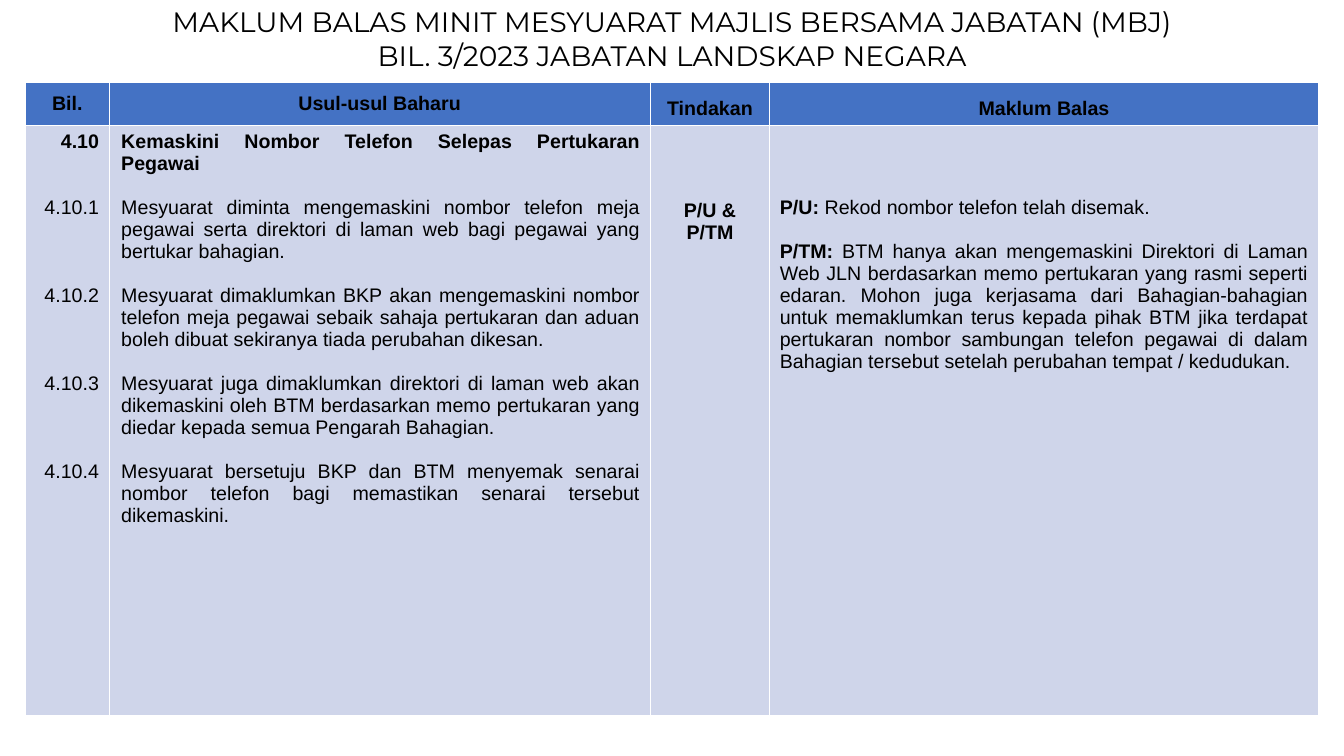
import pptx
import pptx.dml.color
import pptx.enum.text
import pptx.oxml.ns
import pptx.util
from lxml import etree

Pt = pptx.util.Pt
Align = pptx.enum.text.PP_ALIGN
Anchor = pptx.enum.text.MSO_ANCHOR

THEME = {
    "text": "000000", "header": "4472C4", "body": "CFD5EA", "border": "FFFFFF",
    "title_font": "Montserrat", "table_font": "Arial",
    "title_size": 20, "table_size": 14,
}
LINE = 15.75

HEADERS = [("Bil.", 1), ("Usul-usul Baharu", 1), ("Tindakan", 1.5), ("Maklum Balas", 1.5)]
ITEM_NUMBERS = ["4.10", "4.10.1", "4.10.2", "4.10.3", "4.10.4"]
PROPOSALS = [
    "Kemaskini Nombor Telefon Selepas Pertukaran Pegawai",
    "Mesyuarat diminta mengemaskini nombor telefon meja pegawai serta direktori di laman web "
    "bagi pegawai yang bertukar bahagian.",
    "Mesyuarat dimaklumkan BKP akan mengemaskini nombor telefon meja pegawai sebaik sahaja "
    "pertukaran dan aduan boleh dibuat sekiranya tiada perubahan dikesan.",
    "Mesyuarat juga dimaklumkan direktori di laman web akan dikemaskini oleh BTM berdasarkan "
    "memo pertukaran yang diedar kepada semua Pengarah Bahagian.",
    "Mesyuarat bersetuju BKP dan BTM menyemak senarai nombor telefon bagi memastikan senarai "
    "tersebut dikemaskini.",
]
FEEDBACK = [
    ("P/U: ", "Rekod nombor telefon telah disemak."),
    ("P/TM: ", "BTM hanya akan mengemaskini Direktori di Laman Web JLN berdasarkan memo pertukaran "
     "yang rasmi seperti edaran. Mohon juga kerjasama dari Bahagian-bahagian untuk memaklumkan "
     "terus kepada pihak BTM jika terdapat pertukaran nombor sambungan telefon pegawai di dalam "
     "Bahagian tersebut setelah perubahan tempat / kedudukan."),
]


def set_attributes(target, values):
    """Set each named attribute of the target."""
    for name, value in values.items():
        setattr(target, name, value)


class SlideBuilder:
    """Draws styled elements on the current slide."""

    def __init__(self, slide, theme):
        """Keep the slide and its style."""
        self.slide = slide
        self.theme = theme

    def color(self, name):
        """Return a theme colour."""
        return pptx.dml.color.RGBColor.from_string(self.theme[name])

    def text(self, frame, paragraphs, kind, **layout):
        """Fill a frame with paragraphs, each a list of (text, bold) runs and a space before."""
        for index, (runs, space) in enumerate(paragraphs):
            paragraph = frame.paragraphs[0] if index == 0 else frame.add_paragraph()
            set_attributes(paragraph, {"space_before": Pt(space), **layout})
            for content, bold in runs:
                run = paragraph.add_run()
                run.text = content
                set_attributes(run.font, {"name": self.theme[kind + "_font"],
                                          "size": Pt(self.theme[kind + "_size"]), "bold": bold})
                run.font.color.rgb = self.color("text")

    def title(self, box, lines):
        """Add the centred title."""
        frame = self.slide.shapes.add_textbox(*map(Pt, box)).text_frame
        frame.word_wrap = True
        self.text(frame, [([(line, False)], 0) for line in lines], "title", alignment=Align.CENTER)

    def table(self, box, widths, heights):
        """Add an unstyled table with the given column widths and row heights."""
        table = self.slide.shapes.add_table(len(heights), len(widths), *map(Pt, box)).table
        set_attributes(table, {"first_row": False, "horz_banding": False})
        for column, width in zip(table.columns, widths):
            column.width = Pt(width)
        for row, height in zip(table.rows, heights):
            row.height = Pt(height)
        return table

    def cell(self, cell, fill, paragraphs, margins, anchor=Anchor.TOP, **layout):
        """Style a table cell and add its paragraphs."""
        properties = cell._tc.get_or_add_tcPr()
        for side in "LRTB":
            line = etree.SubElement(properties, pptx.oxml.ns.qn("a:ln" + side), w=str(Pt(1)))
            solid = etree.SubElement(line, pptx.oxml.ns.qn("a:solidFill"))
            etree.SubElement(solid, pptx.oxml.ns.qn("a:srgbClr"), val=self.theme["border"])
        cell.fill.solid()
        cell.fill.fore_color.rgb = self.color(fill)
        left, top = margins
        set_attributes(cell, {"margin_left": Pt(left), "margin_top": Pt(top), "margin_right": Pt(7.2),
                              "margin_bottom": Pt(3.6), "vertical_anchor": anchor})
        self.text(cell.text_frame, paragraphs, "table", **layout)


def main():
    """Build the slide and save it."""
    presentation = pptx.Presentation()
    set_attributes(presentation, {"slide_width": Pt(960), "slide_height": Pt(540)})
    builder = SlideBuilder(presentation.slides.add_slide(presentation.slide_layouts[6]), THEME)

    table = builder.table((18.2, 58.5, 923.6, 453), (59.8, 386.5, 85.4, 391.9), (31, 422))
    for column, (header, spacing) in enumerate(HEADERS):
        builder.cell(table.cell(0, column), "header", [([(header, True)], 0)], (7.2, 3.6),
                     Anchor.MIDDLE, alignment=Align.CENTER, line_spacing=spacing)

    number_gaps = [0, 2 * LINE] + [3 * LINE] * 3
    numbers = [([(number, index == 0)], gap)
               for index, (number, gap) in enumerate(zip(ITEM_NUMBERS, number_gaps))]
    proposals = [([(proposal, index == 0)], LINE if index else 0)
                 for index, proposal in enumerate(PROPOSALS)]
    feedback = [([(unit, True), (reply, False)], LINE if index else 0)
                for index, (unit, reply) in enumerate(FEEDBACK)]
    body = [
        (numbers, (7.2, 3.6), Align.RIGHT),
        (proposals, (8.64, 3.6), Align.JUSTIFY),
        ([([("P/U & P/TM", True)], 0)], (7.2, 53.1), Align.CENTER),
        (feedback, (7.2, 3.6 + 3 * LINE), Align.JUSTIFY),
    ]
    for column, (paragraphs, margins, alignment) in enumerate(body):
        builder.cell(table.cell(1, column), "body", paragraphs, margins, alignment=alignment)

    builder.title((49, 0, 862, 55.7), ["MAKLUM BALAS MINIT MESYUARAT MAJLIS BERSAMA JABATAN (MBJ)",
                                       "BIL. 3/2023 JABATAN LANDSKAP NEGARA"])
    presentation.save("out.pptx")


if __name__ == "__main__":
    main()
